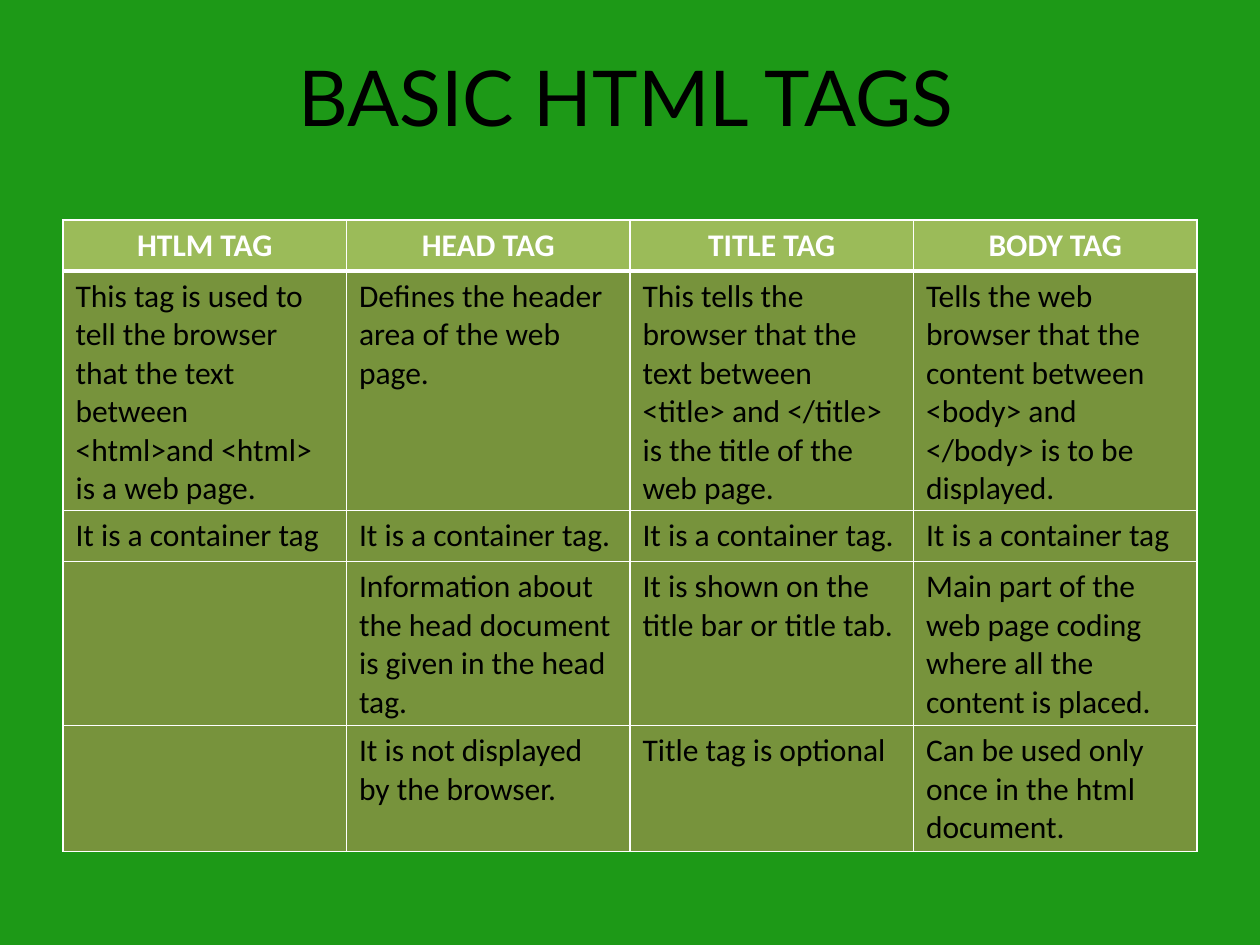
"""Build the slide about basic HTML tags."""
from dataclasses import dataclass

from lxml.etree import SubElement
from pptx import Presentation
from pptx.dml.color import RGBColor
from pptx.enum.text import MSO_ANCHOR as Anchor, PP_ALIGN as Align
from pptx.oxml.ns import qn
from pptx.util import Emu, Pt

EMU_PER_PX = 914400 / 126
COLORS = {
    "background": "1D9917",
    "header": "9BBB59",
    "body": "77933C",
    "white": "FFFFFF",
    "black": "000000",
}


@dataclass(frozen=True)
class TextStyle:
    font: str
    size: int
    color: str
    bold: bool = False
    align: Align = Align.LEFT


@dataclass(frozen=True)
class RowStyle:
    fill: str
    text: TextStyle
    top: int = 1
    bottom: int = 1


@dataclass(frozen=True)
class Tag:
    heading: str
    facts: tuple[str, ...]


TITLE_STYLE = TextStyle("Lato", 44, "black", align=Align.CENTER)
BODY_TEXT = TextStyle("Calibri", 18, "black")
HEADER_ROW = RowStyle("header", TextStyle("Calibri", 18, "white", True, Align.CENTER), bottom=3)
FIRST_BODY_ROW = RowStyle("body", BODY_TEXT, top=3)
BODY_ROW = RowStyle("body", BODY_TEXT)

TAGS = [
    Tag("HTLM TAG", (
        "This tag is used to tell the browser that the text between <html>and <html> is a web page.",
        "It is a container tag",
        "",
        "",
    )),
    Tag("HEAD TAG", (
        "Defines the header area of the web page.",
        "It is a container tag.",
        "Information about the head document is given in the head tag.",
        "It is not displayed by the browser.",
    )),
    Tag("TITLE TAG", (
        "This tells the browser that the text between <title> and </title> is the title of the web page.",
        "It is a container tag.",
        "It is shown on the title bar or title tab.",
        "Title tag is optional",
    )),
    Tag("BODY TAG", (
        "Tells the web browser that the content between <body> and </body> is to be displayed.",
        "It is a container tag",
        "Main part of the web page coding where all the content is placed.",
        "Can be used only once in the html document.",
    )),
]


def px(value: int) -> Emu:
    return Emu(round(value * EMU_PER_PX))


def rgb(name: str) -> RGBColor:
    return RGBColor.from_string(COLORS[name])


def write(text_frame, text: str, style: TextStyle) -> None:
    text_frame.text = text
    paragraph = text_frame.paragraphs[0]
    paragraph.alignment = style.align
    for run in paragraph.runs:
        run.font.name = style.font
        run.font.size = Pt(style.size)
        run.font.bold = style.bold
        run.font.color.rgb = rgb(style.color)


def add_borders(cell, style: RowStyle) -> None:
    properties = cell._tc.get_or_add_tcPr()
    widths = {"a:lnL": 1, "a:lnR": 1, "a:lnT": style.top, "a:lnB": style.bottom}
    for side, width in widths.items():
        line = SubElement(properties, qn(side), w=str(Pt(width)))
        fill = SubElement(line, qn("a:solidFill"))
        SubElement(fill, qn("a:srgbClr"), val=COLORS["white"])


def draw_cell(cell, text: str, style: RowStyle) -> None:
    add_borders(cell, style)
    cell.fill.solid()
    cell.fill.fore_color.rgb = rgb(style.fill)
    write(cell.text_frame, text, style.text)


def draw_title(slide, text: str) -> None:
    shape = slide.shapes.add_textbox(px(194), px(37), px(864), px(117))
    shape.text_frame.word_wrap = True
    shape.text_frame.vertical_anchor = Anchor.MIDDLE
    write(shape.text_frame, text, TITLE_STYLE)


def draw_table(slide, tags: list[Tag]) -> None:
    rows = list(zip(*((tag.heading, *tag.facts) for tag in tags)))
    styles = [HEADER_ROW, FIRST_BODY_ROW] + [BODY_ROW] * (len(rows) - 2)
    height = px(631)
    frame = slide.shapes.add_table(len(rows), len(tags), px(63), px(220), px(1134), height)
    table = frame.table
    for table_row, texts, style in zip(table.rows, rows, styles):
        table_row.height = px(51)
        for cell, text in zip(table_row.cells, texts):
            draw_cell(cell, text, style)
    frame.height = height


def main() -> None:
    presentation = Presentation()
    presentation.slide_width = px(1260)
    presentation.slide_height = px(945)
    slide = presentation.slides.add_slide(presentation.slide_layouts[6])
    slide.background.fill.solid()
    slide.background.fill.fore_color.rgb = rgb("background")
    draw_title(slide, "BASIC HTML TAGS")
    draw_table(slide, TAGS)
    presentation.save("out.pptx")


if __name__ == "__main__":
    main()
